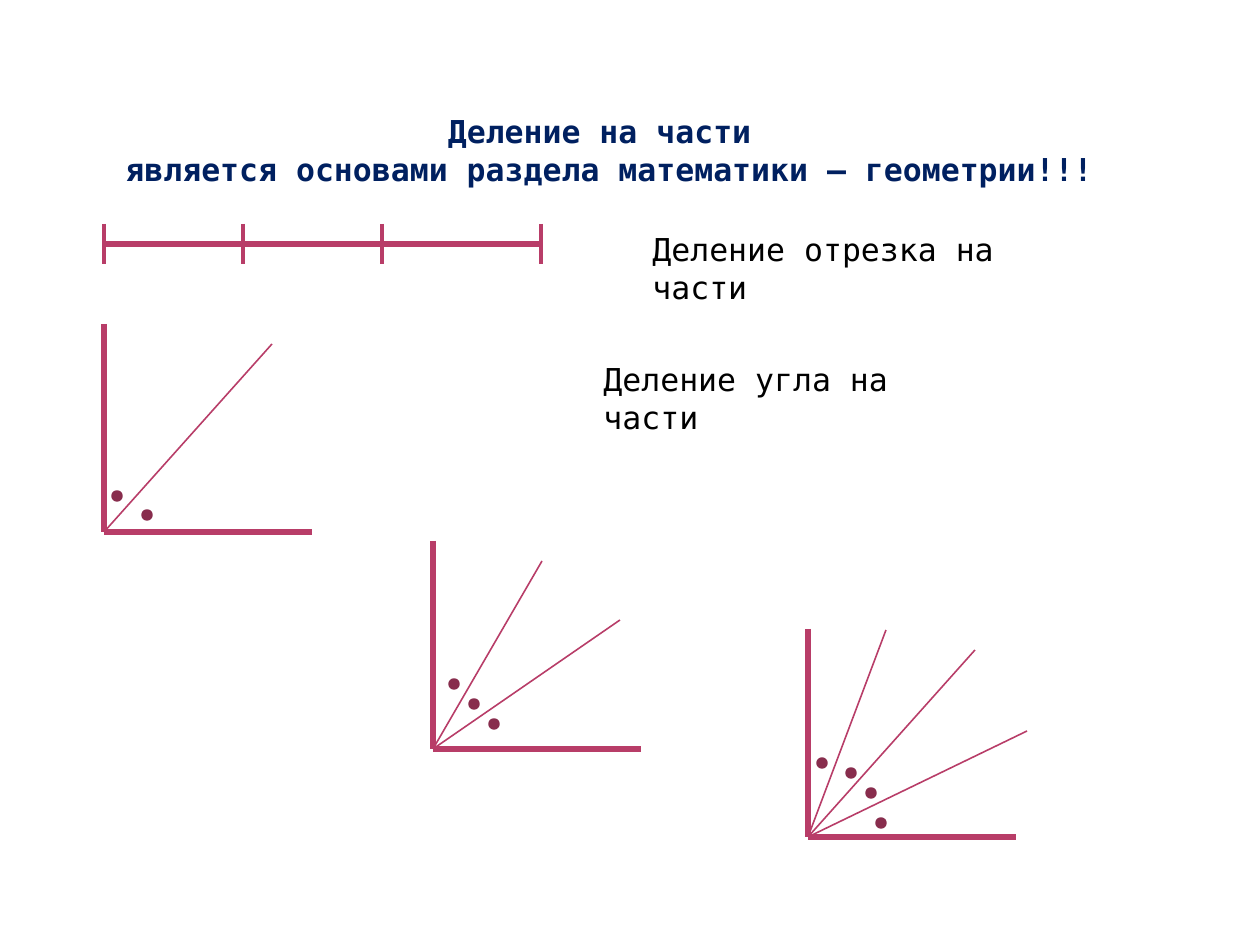
from lxml.etree import SubElement
from pptx import Presentation
from pptx.dml.color import RGBColor
from pptx.enum.shapes import MSO_CONNECTOR, MSO_SHAPE
from pptx.enum.text import PP_ALIGN
from pptx.oxml.ns import qn
from pptx.util import Pt

PX = 914400 / 126
FONT = "DejaVu Sans Mono"
NAVY = RGBColor(0x00, 0x20, 0x60)
BLACK = RGBColor(0x00, 0x00, 0x00)
ROSE = RGBColor(0xB8, 0x3D, 0x68)
DARK_ROSE = RGBColor(0x88, 0x2D, 0x4D)

TITLE = ["Деление на части ",
         "является основами раздела математики – геометрии!!!"]
CAPTIONS = [
    ("Деление отрезка на части", (640, 224, 438, 50)),
    ("Деление угла на части", (591, 354, 384, 50)),
]
SEGMENT_Y = 244
TICK_HALF = 20
TICKS = [104, 243, 382, 541]
ARM = 208
DOT = 6
ANGLES = [
    {"corner": (104, 532), "rays": [(272, 344)],
     "dots": [(117, 496), (147, 515)]},
    {"corner": (433, 749), "rays": [(542, 561), (620, 620)],
     "dots": [(454, 684), (474, 704), (494, 724)]},
    {"corner": (808, 837), "rays": [(886, 630), (975, 650), (1027, 731)],
     "dots": [(822, 763), (851, 773), (871, 793), (881, 823)]},
]


def emu(*lengths):
    return [round(length * PX) for length in lengths]


def add_text(slide, lines, box, color, bold=False, align=PP_ALIGN.LEFT):
    frame = slide.shapes.add_textbox(*emu(*box)).text_frame
    frame.word_wrap = True
    frame.text = "\n".join(lines)
    for paragraph in frame.paragraphs:
        paragraph.alignment = align
        paragraph.font.name = FONT
        paragraph.font.size = Pt(18)
        paragraph.font.bold = bold
        paragraph.font.color.rgb = color


def add_line(slide, start, end, width):
    line = slide.shapes.add_connector(MSO_CONNECTOR.STRAIGHT, *emu(*start, *end))
    line.line.color.rgb = ROSE
    line.line.width = Pt(width)
    SubElement(line._element.spPr, qn("a:effectLst"))


def add_dot(slide, x, y):
    dot = slide.shapes.add_shape(
        MSO_SHAPE.OVAL, *emu(x - DOT / 2, y - DOT / 2, DOT, DOT))
    dot.shadow.inherit = False
    dot.fill.solid()
    dot.fill.fore_color.rgb = ROSE
    dot.line.color.rgb = DARK_ROSE
    dot.line.width = Pt(3.15)


def add_angle(slide, corner, rays, dots):
    x, y = corner
    add_line(slide, (x, y - ARM), corner, 3)
    add_line(slide, corner, (x + ARM, y), 3)
    for end in rays:
        add_line(slide, corner, end, 0.9)
    for center in dots:
        add_dot(slide, *center)


def main():
    presentation = Presentation()
    presentation.slide_width, presentation.slide_height = emu(1260, 945)
    slide = presentation.slides.add_slide(presentation.slide_layouts[6])

    add_text(slide, TITLE, (44, 106, 1130, 89), NAVY, True, PP_ALIGN.CENTER)
    for caption, box in CAPTIONS:
        add_text(slide, [caption], box, BLACK)

    add_line(slide, (TICKS[0], SEGMENT_Y), (TICKS[-1], SEGMENT_Y), 3)
    for x in TICKS:
        add_line(slide, (x, SEGMENT_Y - TICK_HALF), (x, SEGMENT_Y + TICK_HALF), 2.25)

    for angle in ANGLES:
        add_angle(slide, **angle)

    presentation.save("out.pptx")


if __name__ == "__main__":
    main()
